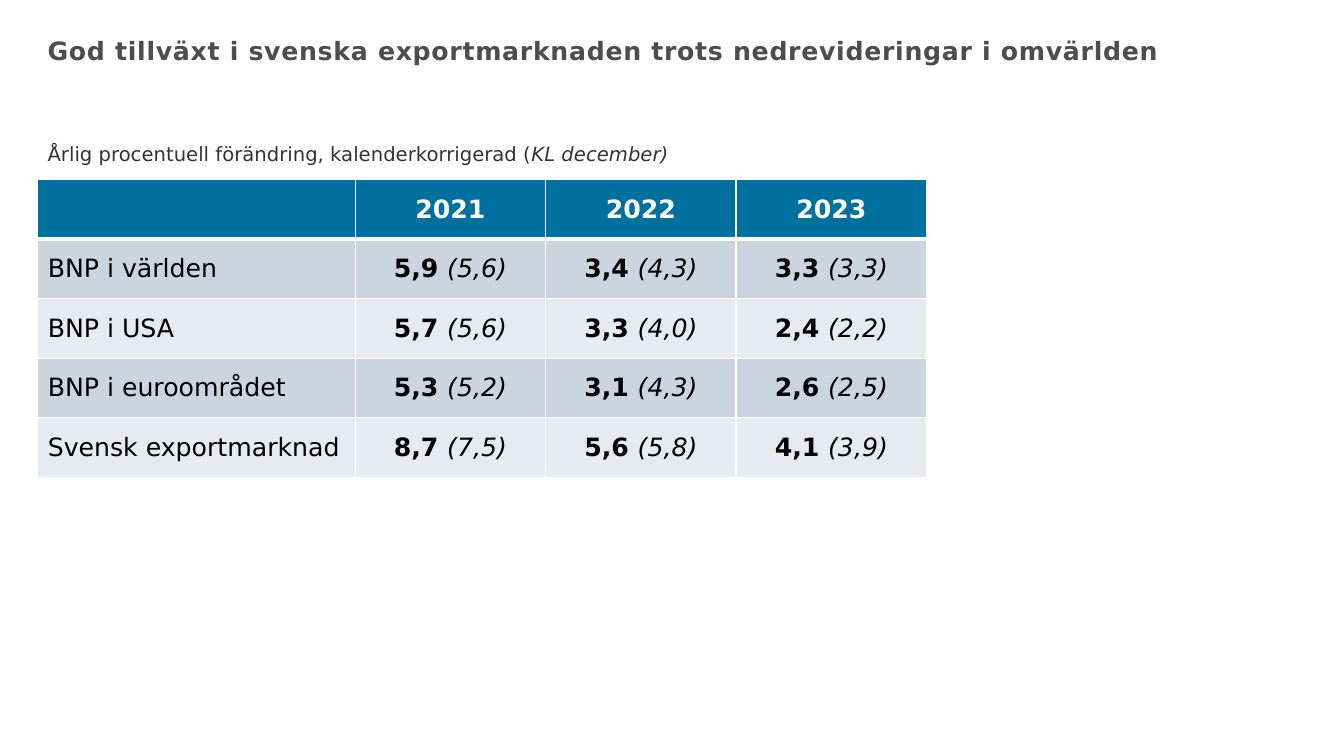
from lxml.etree import SubElement
from pptx import Presentation
from pptx.dml.color import RGBColor
from pptx.enum.text import MSO_ANCHOR, PP_ALIGN
from pptx.oxml.ns import qn
from pptx.util import Cm, Pt

TITLE = "God tillväxt i svenska exportmarknaden trots nedrevideringar i omvärlden"
SUBTITLE = ("Årlig procentuell förändring, kalenderkorrigerad (", "KL december)")
YEARS = ("2021", "2022", "2023")
FORECASTS = (
    ("BNP i världen", ("5,9", "5,6"), ("3,4", "4,3"), ("3,3", "3,3")),
    ("BNP i USA", ("5,7", "5,6"), ("3,3", "4,0"), ("2,4", "2,2")),
    ("BNP i euroområdet", ("5,3", "5,2"), ("3,1", "4,3"), ("2,6", "2,5")),
    ("Svensk exportmarknad", ("8,7", "7,5"), ("5,6", "5,8"), ("4,1", "3,9")),
)

WHITE = RGBColor(0xFF, 0xFF, 0xFF)
BLACK = RGBColor(0x00, 0x00, 0x00)
TITLE_GREY = RGBColor(0x4D, 0x4D, 0x4D)
SUBTITLE_GREY = RGBColor(0x33, 0x33, 0x33)
HEADER_BLUE = RGBColor(0x00, 0x70, 0x9E)
BANDS = (RGBColor(0xCC, 0xD5, 0xDF), RGBColor(0xE7, 0xEB, 0xF0))

FONT = "DejaVu Sans"
LEFT = Cm(0.95)
LABEL_WIDTH, YEAR_WIDTH, ROW_HEIGHT = Cm(8), Cm(4.8), Cm(1.5)
NO_MARGINS = dict.fromkeys(
    ("margin_left", "margin_right", "margin_top", "margin_bottom"), 0)


def apply_format(target, values):
    for name, value in values.items():
        setattr(target, name, value)


def add_run(paragraph, text, size, color, **values):
    run = paragraph.add_run()
    run.text = text
    apply_format(run.font, {"name": FONT, "size": Pt(size), **values})
    run.font.color.rgb = color
    return run


def add_text_box(slide, top, width, anchor):
    frame = slide.shapes.add_textbox(LEFT, top, width, Cm(1.4)).text_frame
    apply_format(frame, {"word_wrap": True, "vertical_anchor": anchor})
    return frame.paragraphs[0]


def set_borders(cell, **widths):
    properties = cell._tc.get_or_add_tcPr()
    for side in ("L", "R", "T", "B"):
        line = SubElement(properties, qn(f"a:ln{side}"), w=str(Pt(widths.get(side, 1))))
        fill = SubElement(line, qn("a:solidFill"))
        SubElement(fill, qn("a:srgbClr"), val=str(WHITE))


def style_cell(cell, color, **widths):
    set_borders(cell, **widths)
    cell.fill.solid()
    cell.fill.fore_color.rgb = color
    cell.vertical_anchor = MSO_ANCHOR.MIDDLE


def fill_header(table):
    for column, text in enumerate(("", *YEARS)):
        cell = table.cell(0, column)
        style_cell(cell, HEADER_BLUE, B=3)
        if text:
            paragraph = cell.text_frame.paragraphs[0]
            paragraph.alignment = PP_ALIGN.CENTER
            add_run(paragraph, text, 18, WHITE, bold=True)


def fill_row(table, row, label, *values):
    top_width = 3 if row == 1 else 1
    for column in range(len(values) + 1):
        style_cell(table.cell(row, column), BANDS[(row - 1) % 2], T=top_width)
    label_paragraph = table.cell(row, 0).text_frame.paragraphs[0]
    add_run(label_paragraph, label, 18, BLACK, bold=False)
    for column, (current, previous) in enumerate(values, 1):
        cell = table.cell(row, column)
        apply_format(cell, NO_MARGINS)
        paragraph = cell.text_frame.paragraphs[0]
        paragraph.alignment = PP_ALIGN.CENTER
        add_run(paragraph, f"{current} ", 18, BLACK, bold=True)
        add_run(paragraph, f"({previous})", 18, BLACK, bold=False, italic=True)


def add_forecast_table(slide):
    rows, columns = len(FORECASTS) + 1, len(YEARS) + 1
    table = slide.shapes.add_table(
        rows, columns, LEFT, Cm(4.53),
        LABEL_WIDTH + YEAR_WIDTH * len(YEARS), ROW_HEIGHT * rows).table
    for index, column in enumerate(table.columns):
        column.width = YEAR_WIDTH if index else LABEL_WIDTH
    for row in table.rows:
        row.height = ROW_HEIGHT
    fill_header(table)
    for index, forecast in enumerate(FORECASTS, 1):
        fill_row(table, index, *forecast)


def main():
    presentation = Presentation()
    presentation.slide_width, presentation.slide_height = Cm(33.87), Cm(19.05)
    slide = presentation.slides.add_slide(presentation.slide_layouts[6])

    title = add_text_box(slide, Cm(0.76), Cm(29), MSO_ANCHOR.TOP)
    title_run = add_run(title, TITLE, 18, TITLE_GREY, bold=True)
    title_run.font._element.set("spc", "50")

    add_forecast_table(slide)

    subtitle = add_text_box(slide, Cm(2.9), Cm(24.05), MSO_ANCHOR.BOTTOM)
    for text, italic in zip(SUBTITLE, (False, True)):
        add_run(subtitle, text, 14, SUBTITLE_GREY, italic=italic)

    presentation.save("out.pptx")


if __name__ == "__main__":
    main()
